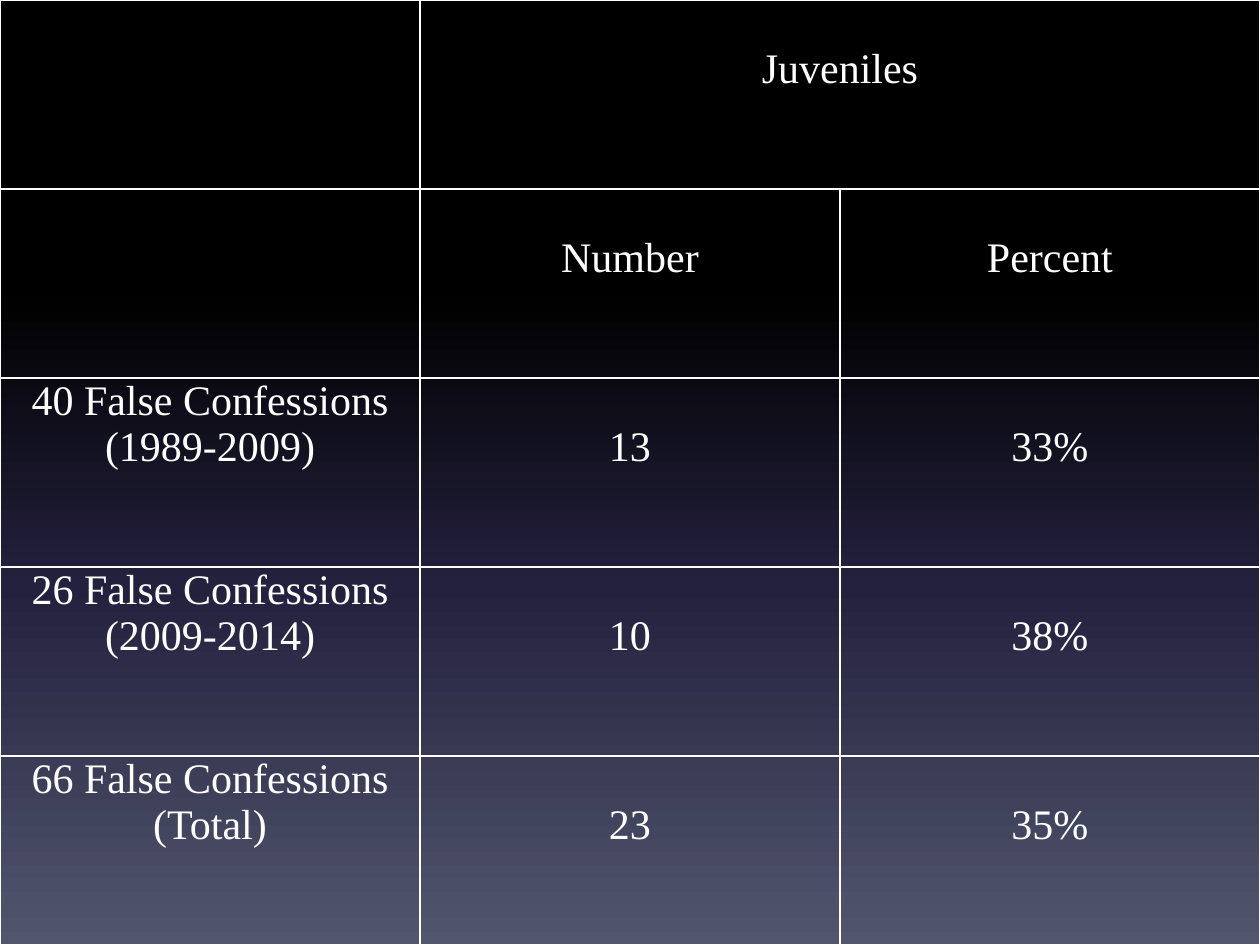
from lxml.etree import SubElement
from pptx import Presentation
from pptx.dml.color import RGBColor
from pptx.enum.text import PP_ALIGN as Align
from pptx.oxml.ns import qn
from pptx.util import Cm, Pt

PAGE_WIDTH, PAGE_HEIGHT = Cm(25.4), Cm(19.05)
WHITE = "FFFFFF"
FONT_NAME, FONT_SIZE = "Times New Roman", Pt(24)
SIDE_MARGIN = Cm(0.18)
LINE_DROP = Cm(0.93)  # values start one text line below the row labels

GRADIENT = [(0, "000000"), (31, "000000"), (62, "24213E"), (100, "51566D")]
ROWS = [
    ("", "Juveniles", ""),
    ("", "Number", "Percent"),
    ("40 False Confessions (1989-2009)", "13", "33%"),
    ("26 False Confessions (2009-2014)", "10", "38%"),
    ("66 False Confessions (Total)", "23", "35%"),
]


def color(hex_value):
    return RGBColor.from_string(hex_value)


def paint_background(page):
    """Fill the page with a gradient running from top to bottom."""
    fill = page.background.fill
    fill.gradient()
    fill.gradient_angle = 270
    stops = page.background._cSld.find(".//" + qn("a:gsLst"))
    for stop in list(stops):
        stops.remove(stop)
    for percent, hex_value in GRADIENT:
        stop = SubElement(stops, qn("a:gs"), pos=str(percent * 1000))
        SubElement(stop, qn("a:srgbClr"), val=hex_value)


def draw_borders(cell):
    """Draw a thin white line on all four sides of a cell."""
    properties = cell._tc.get_or_add_tcPr()
    for side in ("a:lnL", "a:lnR", "a:lnT", "a:lnB"):
        line = SubElement(properties, qn(side), w=str(Pt(1)))
        solid = SubElement(line, qn("a:solidFill"))
        SubElement(solid, qn("a:srgbClr"), val=WHITE)


def write_cell(cell, text, top_margin):
    cell.margin_left = cell.margin_right = SIDE_MARGIN
    cell.margin_top, cell.margin_bottom = top_margin, 0
    para = cell.text_frame.paragraphs[0]
    para.alignment = Align.CENTER
    span = para.add_run()
    span.text = text
    span.font.name = FONT_NAME
    span.font.size = FONT_SIZE
    span.font.color.rgb = color(WHITE)


def add_confession_table(page):
    column_count = len(ROWS[0])
    frame = page.shapes.add_table(
        len(ROWS), column_count, Cm(0), Cm(0), PAGE_WIDTH, PAGE_HEIGHT
    )
    table = frame.table
    table.first_row = table.horz_banding = False
    for column in table.columns:
        column.width = PAGE_WIDTH // column_count
    for row in table.rows:
        row.height = PAGE_HEIGHT // len(ROWS)

    for row_index, texts in enumerate(ROWS):
        for column_index, text in enumerate(texts):
            cell = table.cell(row_index, column_index)
            draw_borders(cell)
            cell.fill.background()
            if text:
                write_cell(cell, text, LINE_DROP if column_index else 0)

    # The "Juveniles" heading spans both value columns
    table.cell(0, 1).merge(table.cell(0, 2))


def main():
    deck = Presentation()
    deck.slide_width, deck.slide_height = PAGE_WIDTH, PAGE_HEIGHT
    page = deck.slides.add_slide(deck.slide_layouts.get_by_name("Blank"))
    paint_background(page)
    add_confession_table(page)
    deck.save("out.pptx")


if __name__ == "__main__":
    main()
